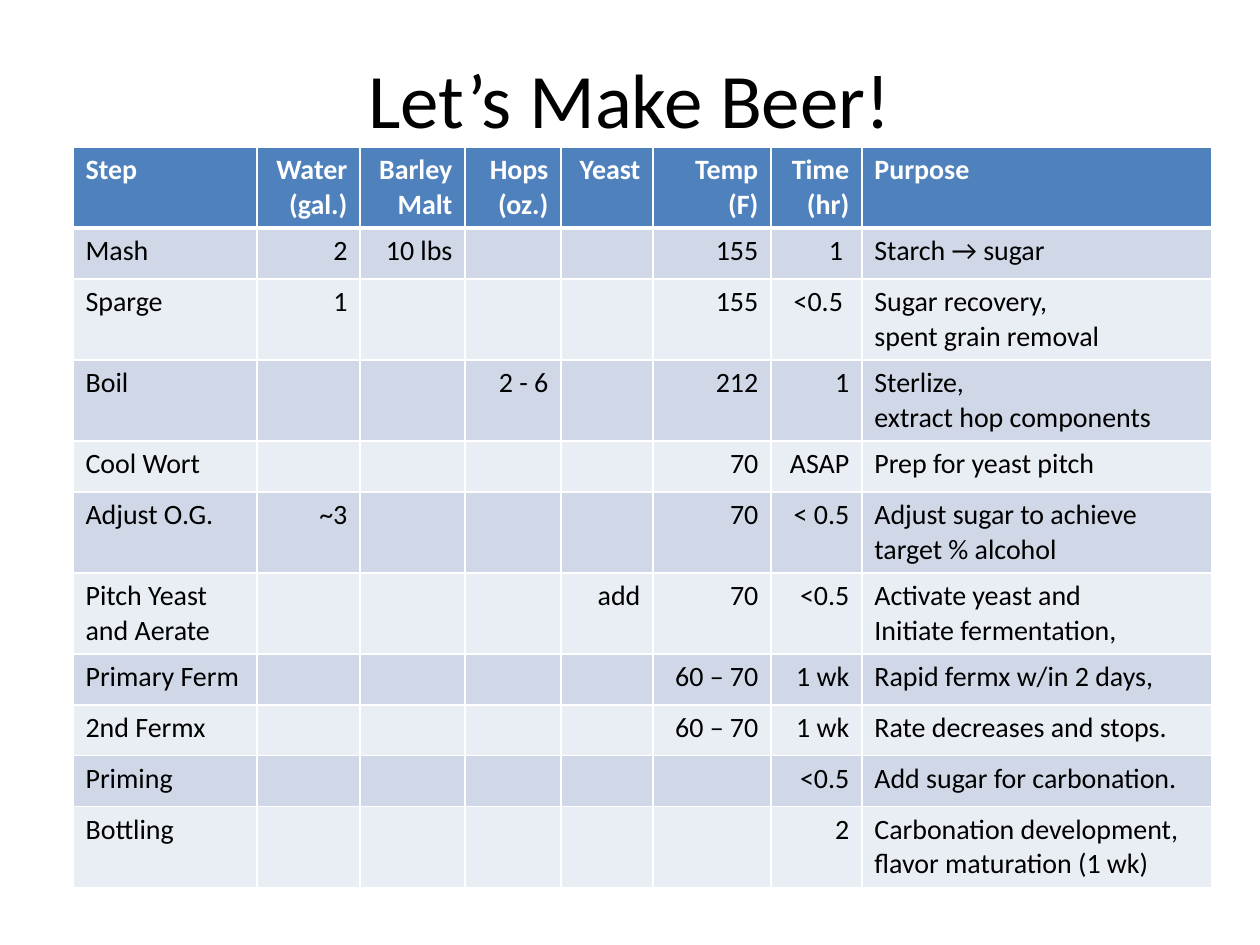
from lxml import etree
from pptx import Presentation
from pptx.dml.color import RGBColor
from pptx.enum.text import MSO_ANCHOR, PP_ALIGN
from pptx.oxml.ns import qn
from pptx.util import Pt

LEFT, RIGHT, CENTER = PP_ALIGN.LEFT, PP_ALIGN.RIGHT, PP_ALIGN.CENTER
MIDDLE = MSO_ANCHOR.MIDDLE
EMU_PER_PX = 914400 // 126
FONT = "Calibri"
HEADER_FILL = "4F81BD"
BAND_FILLS = ("E9EDF4", "D0D8E8")
WHITE, BLACK = "FFFFFF", "000000"

COLUMN_WIDTHS = (184, 103, 105, 96, 92, 118, 91, 350)
LEFT_COLUMNS = (0, 7)
ONE_LINE, TWO_LINES = 51, 81
TWO_LINE_ROWS = (0, 2, 3, 5, 6, 10)
ROWS = (
    ("Step", "Water\n(gal.)", "Barley\nMalt", "Hops\n(oz.)", "Yeast",
     "Temp\n(F)", "Time\n(hr)", "Purpose"),
    ("Mash", "2", "10 lbs", "", "", "155", "1 ", "Starch → sugar"),
    ("Sparge", "1", "", "", "", "155", "<0.5 ",
     "Sugar recovery,\nspent grain removal"),
    ("Boil", "", "", "2 - 6", "", "212", "1",
     "Sterlize,\nextract hop components"),
    ("Cool Wort", "", "", "", "", "70", "ASAP", "Prep for yeast pitch"),
    ("Adjust O.G.", "~3", "", "", "", "70", "< 0.5",
     "Adjust sugar to achieve target % alcohol"),
    ("Pitch Yeast and Aerate", "", "", "", "add", "70", "<0.5",
     "Activate yeast and\nInitiate fermentation,"),
    ("Primary Ferm", "", "", "", "", "60 – 70", "1 wk",
     "Rapid fermx w/in 2 days,"),
    ("2nd Fermx", "", "", "", "", "60 – 70", "1 wk",
     "Rate decreases and stops."),
    ("Priming", "", "", "", "", "", "<0.5", "Add sugar for carbonation."),
    ("Bottling", "", "", "", "", "", "2",
     "Carbonation development, flavor maturation (1 wk)"),
)


def px(n):
    return n * EMU_PER_PX


def rgb(value):
    return RGBColor.from_string(value)


def write(tf, text, size, color, align, bold=False):
    tf.text = text
    for p in tf.paragraphs:
        p.alignment = align
        for r in p.runs:
            r.font.name = FONT
            r.font.size = Pt(size)
            r.font.bold = bold
            r.font.color.rgb = rgb(color)


def set_borders(cell, widths):
    """Draw white borders; widths maps each side's tag to points."""
    tc_pr = cell._tc.get_or_add_tcPr()
    for i, (side, width) in enumerate(widths.items()):
        ln = etree.Element(qn(f"a:{side}"), w=str(Pt(width)))
        fill = etree.SubElement(ln, qn("a:solidFill"))
        etree.SubElement(fill, qn("a:srgbClr"), val=WHITE)
        tc_pr.insert(i, ln)


def add_title(s, text):
    tf = s.shapes.add_textbox(px(63), px(38), px(1134), px(120)).text_frame
    tf.word_wrap = True
    tf.vertical_anchor = MIDDLE
    write(tf, text, 44, BLACK, CENTER)


def format_cell(cell, row, col, text):
    header = row == 0
    align = LEFT if col in LEFT_COLUMNS else RIGHT
    write(cell.text_frame, text, 16, WHITE if header else BLACK, align, header)
    cell.fill.solid()
    cell.fill.fore_color.rgb = rgb(HEADER_FILL if header else BAND_FILLS[row % 2])
    set_borders(cell, {"lnL": 1, "lnR": 1,
                       "lnT": 3 if row == 1 else 1,
                       "lnB": 3 if header else 1})


def add_steps_table(s):
    heights = [TWO_LINES if i in TWO_LINE_ROWS else ONE_LINE
               for i in range(len(ROWS))]
    table = s.shapes.add_table(len(ROWS), len(COLUMN_WIDTHS), px(73), px(147),
                               px(sum(COLUMN_WIDTHS)), px(sum(heights))).table
    for column, width in zip(table.columns, COLUMN_WIDTHS):
        column.width = px(width)
    for i, (texts, height) in enumerate(zip(ROWS, heights)):
        table.rows[i].height = px(height)
        for j, text in enumerate(texts):
            format_cell(table.cell(i, j), i, j, text)


def main():
    prs = Presentation()
    prs.slide_width, prs.slide_height = px(1260), px(945)
    s = prs.slides.add_slide(prs.slide_layouts[6])
    add_title(s, "Let’s Make Beer!")
    add_steps_table(s)
    prs.save("out.pptx")


if __name__ == "__main__":
    main()
